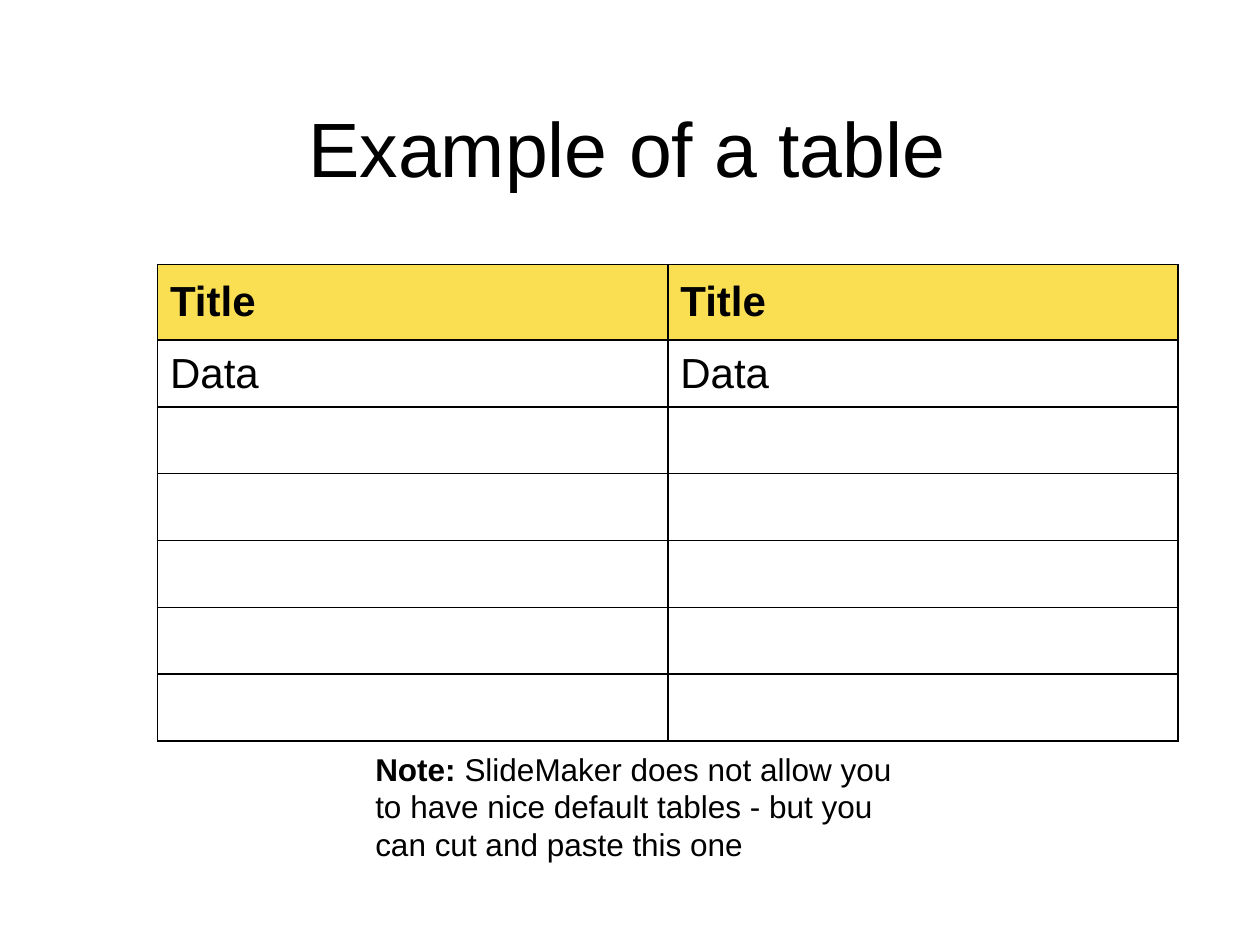
"""Build a slide with a two-column example table and a note below it."""
import pptx
import pptx.dml.color
import pptx.enum.text
import pptx.oxml
import pptx.oxml.ns
import pptx.util
from pptx.util import Inches


def color(value):
    return pptx.dml.color.RGBColor.from_string(value)


def format_font(font, size, bold=False):
    values = {"name": "Arial", "size": pptx.util.Pt(size), "bold": bold}
    for name, value in values.items():
        setattr(font, name, value)
    font.color.rgb = color("000000")


presentation = pptx.Presentation()
presentation.slide_width = Inches(10)
presentation.slide_height = Inches(7.5)
slide = presentation.slides.add_slide(presentation.slide_layouts[5])

title = slide.shapes.title
title_place = {"left": 0.48, "top": 0.54, "width": 9, "height": 1.25}
for name, value in title_place.items():
    setattr(title, name, Inches(value))
title.text_frame.vertical_anchor = pptx.enum.text.MSO_ANCHOR.MIDDLE
title_paragraph = title.text_frame.paragraphs[0]
title_paragraph.alignment = pptx.enum.text.PP_ALIGN.CENTER
title_run = title_paragraph.add_run()
title_run.text = "Example of a table"
format_font(title_run.font, 44)

row_texts = ["Title", "Data", "", "", "", "", ""]
row_heights = [0.6] + [0.53] * 6
table = slide.shapes.add_table(
    len(row_texts), 2, Inches(1.25), Inches(2.1), Inches(8.1), Inches(sum(row_heights))
).table
table.first_row = False
table.horz_banding = False
for column in table.columns:
    column.width = Inches(4.05)

for row_index, (row, text, height) in enumerate(zip(table.rows, row_texts, row_heights)):
    row.height = Inches(height)
    for cell in row.cells:
        properties = cell._tc.get_or_add_tcPr()
        for side in ("lnL", "lnR", "lnT", "lnB"):
            properties.append(pptx.oxml.parse_xml(
                f'<a:{side} {pptx.oxml.ns.nsdecls("a")} w="12700"><a:solidFill>'
                f'<a:srgbClr val="000000"/></a:solidFill></a:{side}>'
            ))
        if row_index == 0:
            cell.fill.solid()
            cell.fill.fore_color.rgb = color("FBDF53")
        else:
            cell.fill.background()
        cell.vertical_anchor = pptx.enum.text.MSO_ANCHOR.MIDDLE
        paragraph = cell.text_frame.paragraphs[0]
        if text:
            run = paragraph.add_run()
            run.text = text
            format_font(run.font, 24, bold=row_index == 0)

note = slide.shapes.add_textbox(Inches(2.88), Inches(5.9), Inches(4.49), Inches(1))
note.text_frame.word_wrap = True
note.text_frame.auto_size = pptx.enum.text.MSO_AUTO_SIZE.SHAPE_TO_FIT_TEXT
note_runs = [
    ("Note: ", True),
    ("SlideMaker does not allow you to have nice default tables"
     " - but you can cut and paste this one", False),
]
for text, bold in note_runs:
    run = note.text_frame.paragraphs[0].add_run()
    run.text = text
    format_font(run.font, 18, bold)

presentation.save("out.pptx")
